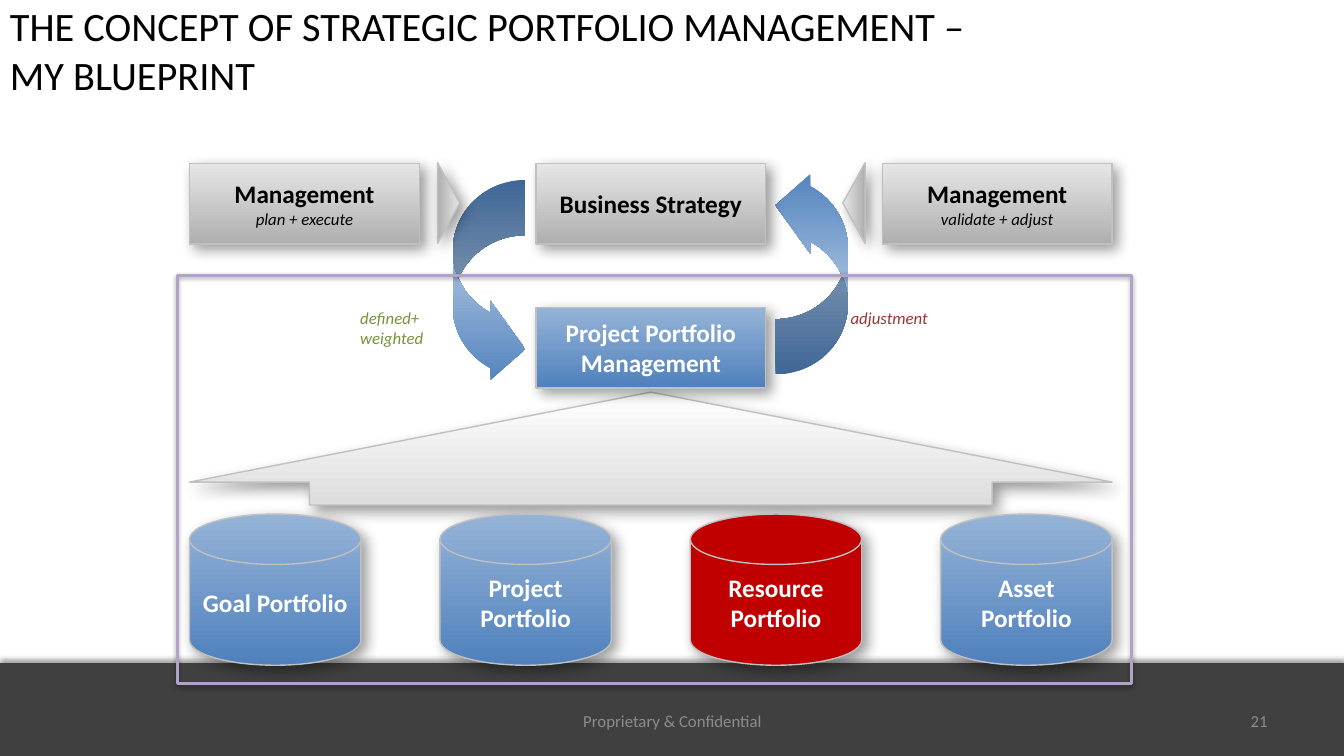
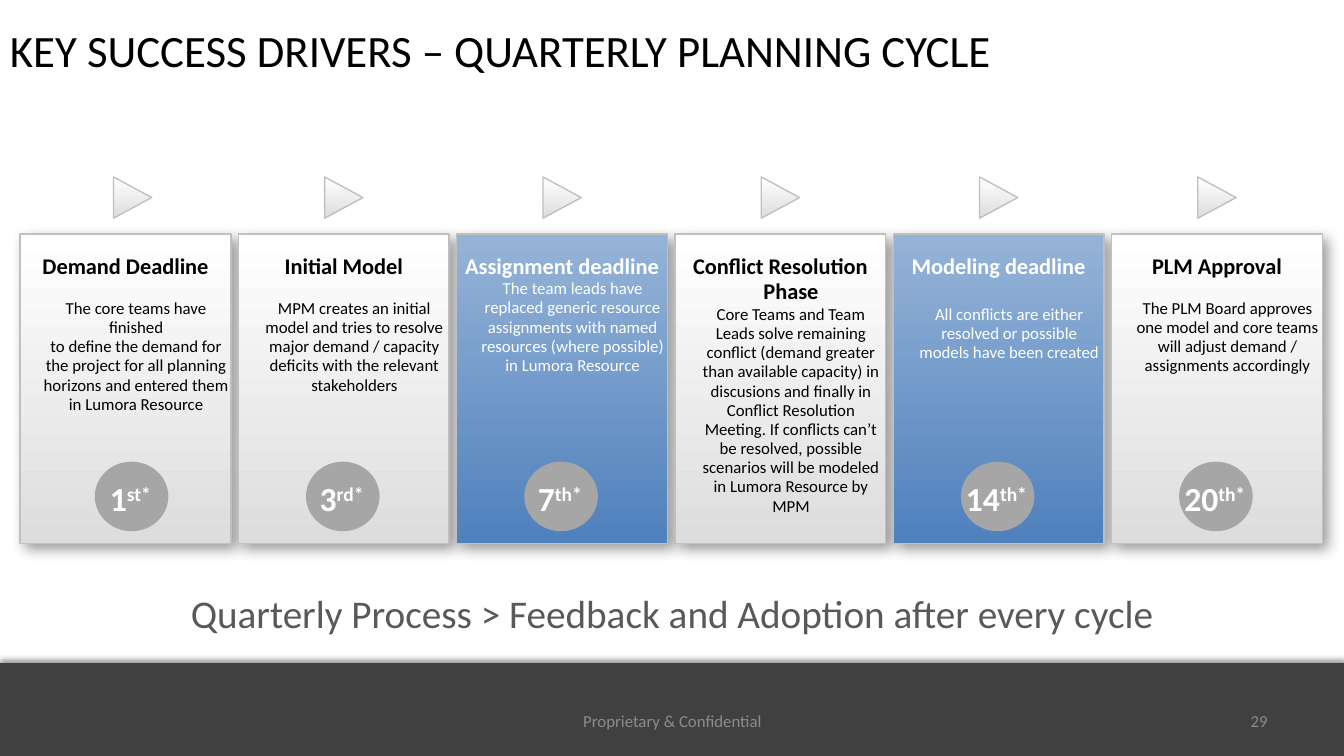
from lxml import etree
from pptx import Presentation
from pptx.dml.color import RGBColor
from pptx.enum.shapes import MSO_SHAPE
from pptx.enum.text import MSO_ANCHOR, PP_ALIGN
from pptx.oxml.ns import qn
from pptx.util import Inches, Pt

RECTANGLE = MSO_SHAPE.RECTANGLE
TRIANGLE = MSO_SHAPE.ISOSCELES_TRIANGLE
ELLIPSE = MSO_SHAPE.OVAL
CYLINDER = MSO_SHAPE.FLOWCHART_MAGNETIC_DISK
UP_ARROW = MSO_SHAPE.UP_ARROW
CURVED_ARROW = MSO_SHAPE.CURVED_DOWN_ARROW
TOP, MIDDLE = MSO_ANCHOR.TOP, MSO_ANCHOR.MIDDLE
LEFT, CENTER, RIGHT = PP_ALIGN.LEFT, PP_ALIGN.CENTER, PP_ALIGN.RIGHT

FONT = "Calibri"
BLACK = RGBColor(0x00, 0x00, 0x00)
WHITE = RGBColor(0xFF, 0xFF, 0xFF)
BAND = RGBColor(0x40, 0x40, 0x40)
FOOTER = RGBColor(0x8C, 0x8C, 0x8C)
SLATE = RGBColor(0x59, 0x59, 0x59)
BORDER = RGBColor(0xC0, 0xC0, 0xC0)
BADGE = RGBColor(0xA6, 0xA6, 0xA6)
RED = RGBColor(0xC0, 0x00, 0x00)
MAROON = RGBColor(0x95, 0x37, 0x35)
GREEN = RGBColor(0x77, 0x93, 0x3C)
PURPLE = RGBColor(0xB3, 0xA2, 0xC7)
BLUE = RGBColor(0x4F, 0x81, 0xBD)
LIGHT_BLUE = RGBColor(0x95, 0xB3, 0xD7)
PALE = RGBColor(0xDD, 0xDD, 0xDD)
SILVER = RGBColor(0xE6, 0xE6, 0xE6)
STEEL = RGBColor(0xAF, 0xAF, 0xAF)

BLUE_FADE = (LIGHT_BLUE, BLUE)
BLUE_SHEEN = (BLUE, LIGHT_BLUE, BLUE)
GRAY_FADE = (SILVER, STEEL)
PALE_FADE = (WHITE, PALE)

SOFT_SHADOW = (40, 10, 5, 45)
BAND_SHADOW = (40, 4, 3, 270)
FRAME_SHADOW = (38, 3.1, 1.6, 90)
BOX_INSETS = (0.12, 0.08, 0.12, 0.08)
NO_INSETS = (0, 0, 0, 0)
INDENT = 0.21

CARDS = [
    ("Demand Deadline", "The core teams have finished\nto define the demand for the project for all "
     "planning horizons and entered them in Lumora Resource", 14, "1", "st* ", 0.07),
    ("Initial Model", "MPM creates an initial model and tries to resolve major demand / capacity "
     "deficits with the relevant stakeholders", 14, "3", "rd* ", 0),
    ("Assignment deadline", "The team leads have replaced generic resource assignments with named "
     "resources (where possible) in Lumora Resource", 0, "7", "th* ", 0),
    ("Conflict Resolution Phase", "Core Teams and Team Leads solve remaining conflict (demand "
     "greater than available capacity) in discusions and finally in Conflict Resolution Meeting. "
     "If conflicts can’t be resolved, possible scenarios will be modeled in Lumora Resource by MPM",
     0, None, None, 0),
    ("Modeling deadline", "All conflicts are either resolved or possible models have been created",
     18, "14", "th* ", 0),
    ("PLM Approval", "The PLM Board approves one model and core teams will adjust demand / "
     "assignments accordingly", 14, "20", "th* ", 0),
]
BLUE_CARDS = ("Assignment deadline", "Modeling deadline")


def paint(fill, colors, angle):
    if colors is None:
        fill.background()
    elif isinstance(colors, RGBColor):
        fill.solid()
        fill.fore_color.rgb = colors
    else:
        fill.gradient()
        fill.gradient_angle = -angle % 360
        stops = fill._xPr.find(qn("a:gradFill")).find(qn("a:gsLst"))
        for stop in list(stops):
            stops.remove(stop)
        for index, color in enumerate(colors):
            position = str(100000 * index // (len(colors) - 1))
            stop = etree.SubElement(stops, qn("a:gs"), pos=position)
            etree.SubElement(stop, qn("a:srgbClr"), val=str(color))


def cast_shadow(shape, alpha, blur, distance, direction):
    effects = shape._element.spPr.find(qn("a:effectLst"))
    outer = etree.SubElement(effects, qn("a:outerShdw"), blurRad=str(Pt(blur)),
                             dist=str(Pt(distance)), dir=str(direction * 60000),
                             algn="ctr", rotWithShape="0")
    color = etree.SubElement(outer, qn("a:srgbClr"), val=str(BLACK))
    etree.SubElement(color, qn("a:alpha"), val=str(alpha * 1000))


def add_shape(page, kind, box, fill=None, angle=90, line=BORDER, width=1, shadow=SOFT_SHADOW,
              rotation=0, flip=None, adjust=()):
    shape = page.shapes.add_shape(kind, *map(Inches, box))
    paint(shape.fill, fill, angle)
    shape.shadow.inherit = False
    if line is None:
        shape.line.fill.background()
    else:
        shape.line.color.rgb = line
        shape.line.width = Pt(width)
    if shadow:
        cast_shadow(shape, *shadow)
    shape.rotation = rotation
    if flip:
        shape._element.spPr.find(qn("a:xfrm")).set(flip, "1")
    for index, value in enumerate(adjust):
        shape.adjustments[index] = value
    return shape


def set_frame(shape, insets=BOX_INSETS, anchor=MIDDLE, wrap=True):
    frame = shape.text_frame
    frame.word_wrap = wrap
    frame.vertical_anchor = anchor
    frame.margin_left, frame.margin_top, frame.margin_right, frame.margin_bottom = map(Inches, insets)
    return frame


def add_box(page, box, insets=NO_INSETS, anchor=TOP, wrap=True):
    return set_frame(page.shapes.add_textbox(*map(Inches, box)), insets, anchor, wrap)


def write(frame, text, size=18, color=BLACK, bold=False, italic=False, align=CENTER,
          spacing=None, before=0, indent=0, hanging=0, superscript=None):
    para = frame.paragraphs[-1]
    if para.runs:
        para = frame.add_paragraph()
    para.alignment = align
    if spacing:
        para.line_spacing = spacing
    if before:
        para.space_before = Pt(before)
    if indent:
        properties = para._p.get_or_add_pPr()
        properties.set("marL", str(Inches(indent)))
        properties.set("indent", str(-Inches(hanging)))
    for index, part in enumerate(text.split("\n")):
        if index:
            para.add_line_break()
        para.add_run().text = part
    if superscript:
        span = para.add_run()
        span.text = superscript
        span.font._element.set("baseline", "30000")
    for span in para.runs:
        span.font.name = FONT
        span.font.size = Pt(size)
        span.font.bold = bold
        span.font.italic = italic
        span.font.color.rgb = color


def start_page(deck, title, title_size, number):
    page = deck.slides.add_slide(deck.slide_layouts[6])
    add_shape(page, RECTANGLE, (0, 6.58, 13.33, 0.92), BAND, line=BAND, shadow=BAND_SHADOW)
    insets = (0.1, 0.05, 0.1, 0.05)
    write(add_box(page, (0, 0, 11.55, 0.99), insets, MIDDLE), title, size=title_size, align=LEFT)
    write(add_box(page, (4.56, 6.95, 4.22, 0.4), insets, MIDDLE), "Proprietary & Confidential",
          size=12, color=FOOTER)
    write(add_box(page, (9.56, 6.95, 3.11, 0.4), insets, MIDDLE), number,
          size=12, color=FOOTER, align=RIGHT)
    return page


def add_block(page, kind, box, text, fill, color=WHITE, detail=None):
    frame = set_frame(add_shape(page, kind, box, fill))
    write(frame, text, color=color, bold=True)
    if detail:
        write(frame, detail, size=12, color=color, italic=True)


def add_portfolios(page, left, top, width):
    add_shape(page, UP_ARROW, (left, top, width, 1.12), PALE_FADE, adjust=(0.74, 0.797))
    names = ("Goal Portfolio", "Project Portfolio", "Resource Portfolio", "Asset Portfolio")
    disk_width = 1.7
    pitch = (width - disk_width) / (len(names) - 1)
    for index, name in enumerate(names):
        box = (left + index * pitch, top + 1.21, disk_width, 1.5)
        add_block(page, CYLINDER, box, name, RED if name.startswith("Resource") else BLUE_FADE)


def add_management(page, left, top, width):
    block_width, height = 2.28, 0.8
    pitch = (width - block_width) / 2
    center = left + pitch
    add_block(page, RECTANGLE, (center, top + 1.43, block_width, height),
              "Project Portfolio Management", BLUE_FADE)
    for arrow_left, arrow_top, rotation in ((center - 1.5, top + 0.84, 270),
                                            (center + 1.7, top + 0.7, 90)):
        add_shape(page, CURVED_ARROW, (arrow_left, arrow_top, 2.07, 0.72), BLUE_SHEEN, angle=0,
                  line=None, shadow=None, rotation=rotation, flip="flipH",
                  adjust=(0.762, 1.087, 0.479))
    blocks = (("Management", "plan + execute"), ("Business Strategy", None),
              ("Management", "validate + adjust"))
    for index, (text, detail) in enumerate(blocks):
        add_block(page, RECTANGLE, (left + index * pitch, top, block_width, height), text,
                  GRAY_FADE, BLACK, detail)
    write(add_box(page, (8.19, top + 1.43, 1.26, 0.29), wrap=False), "adjustment",
          size=12, color=MAROON, italic=True)
    weighting = add_box(page, (3.06, top + 1.43, 1.65, 0.45), wrap=False)
    for text in ("defined+ ", "weighted"):
        write(weighting, text, size=12, color=GREEN, italic=True)


def build_blueprint(deck):
    page = start_page(deck, "THE CONCEPT OF STRATEGIC PORTFOLIO MANAGEMENT –\nMY BLUEPRINT",
                      28.8, "21")
    left, top, width = 1.88, 1.62, 9.15
    add_portfolios(page, left, 3.89, width)
    add_management(page, left, top, width)
    add_shape(page, RECTANGLE, (1.76, 2.73, 9.46, 4.05), line=PURPLE, width=2, shadow=FRAME_SHADOW)
    for pointer_left, rotation in ((4.05, 270), (8.07, 90)):
        add_shape(page, TRIANGLE, (pointer_left, top + 0.285, 0.8, 0.22), GRAY_FADE,
                  rotation=rotation, flip="flipV")


def add_card(page, left, top, title, body, gap, day, suffix, nudge):
    width = 2.09
    is_blue = title in BLUE_CARDS
    color = WHITE if is_blue else BLACK
    card = add_shape(page, RECTANGLE, (left, top, width, 3.07), BLUE_FADE if is_blue else PALE_FADE)
    frame = set_frame(card, (0, 0.2, 0, 0.08), TOP)
    write(frame, title, size=16, color=color, bold=True, spacing=0.95, indent=INDENT, hanging=INDENT)
    write(frame, body, size=12, color=color, spacing=0.95, before=gap, indent=INDENT)
    add_shape(page, TRIANGLE, (left + 0.84 + nudge, top - 0.55, 0.41, 0.38), PALE_FADE, angle=0,
              shadow=None, rotation=90)
    if day:
        add_shape(page, ELLIPSE, (left + 0.67 + nudge, top + 2.26, 0.73, 0.69), BADGE,
                  line=None, shadow=None)
        label = add_box(page, (left + nudge, top + 2.36, width, 0.57), anchor=MIDDLE)
        write(label, day, size=24, color=WHITE, bold=True, spacing=0.95,
              indent=INDENT, hanging=INDENT, superscript=suffix)


def build_cycle(deck):
    page = start_page(deck, "KEY SUCCESS DRIVERS – QUARTERLY PLANNING CYCLE", 32, "29")
    left, pitch = 0.2, 2.165
    for index, card in enumerate(CARDS):
        add_card(page, left + index * pitch, 2.32, *card)
    write(add_box(page, (0, 5.9, 13.33, 0.42)),
          "Quarterly Process > Feedback and Adoption after every cycle",
          size=28, color=SLATE, spacing=0.9)


def main():
    deck = Presentation()
    deck.slide_width, deck.slide_height = Inches(13.33), Inches(7.5)
    build_blueprint(deck)
    build_cycle(deck)
    deck.save("out.pptx")


if __name__ == "__main__":
    main()
